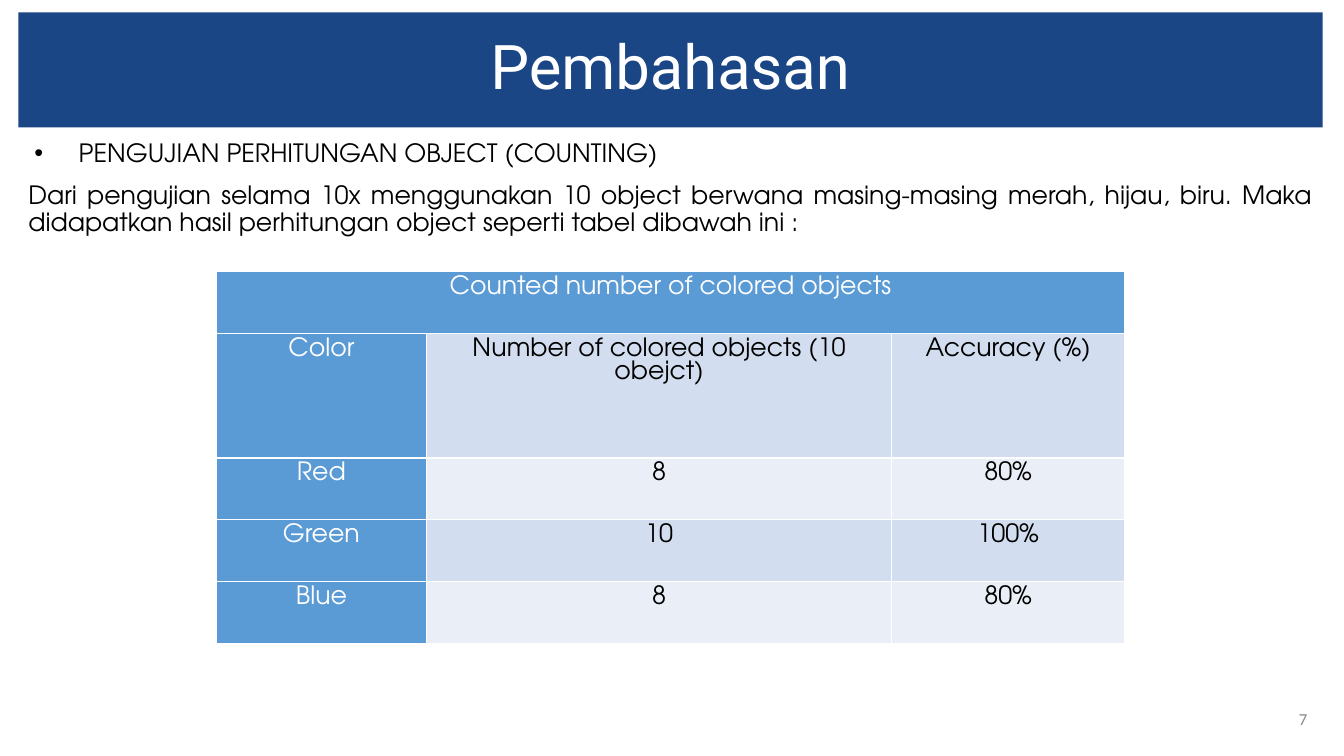
from dataclasses import dataclass

from lxml.etree import SubElement as Sub
from pptx import Presentation
from pptx.dml.color import RGBColor as Rgb
from pptx.enum.text import MSO_ANCHOR as Anchor, MSO_AUTO_SIZE as Auto, PP_ALIGN as Align
from pptx.oxml import parse_xml
from pptx.oxml.ns import nsdecls, qn
from pptx.util import Cm, Pt

HUES = {
    "navy": "1B4685", "blue": "5B9BD5", "pale": "D2DEEF", "light": "EAEFF7",
    "white": "FFFFFF", "black": "000000", "gray": "888888",
}
FACE = "TeX Gyre Adventor"


@dataclass
class Row:
    """One table row: its cells, height and band colour."""
    cells: tuple[str, ...]
    high: float
    band: str


@dataclass
class Box:
    """A place on the slide in centimetres."""
    left: float
    top: float
    wide: float
    high: float

    def lengths(self) -> list:
        """Return the four lengths for python-pptx."""
        return [Cm(n) for n in (self.left, self.top, self.wide, self.high)]


COLS = (5.3, 11.72, 5.87)
ROWS = (
    Row(("Counted number of colored objects",), 1.56, "blue"),
    Row(("Color", "Number of colored objects (10 obejct)", "Accuracy (%)"), 3.13, "pale"),
    Row(("Red", "8", "80%"), 1.56, "light"),
    Row(("Green", "10", "100%"), 1.56, "pale"),
    Row(("Blue", "8", "80%"), 1.56, "light"),
)


def write(para, text: str, *, size: float = 18, face: str = FACE, hue: str = "black",
          align=Align.CENTER, line: float = 0.9, gap: float = 0) -> None:
    """Fill a paragraph with formatted text."""
    run = para.add_run()
    run.text = text
    run.font.size, run.font.name = Pt(size), face
    run.font.color.rgb = Rgb.from_string(HUES[hue])
    para.alignment, para.line_spacing = align, line
    para.space_before, para.space_after = Pt(gap), Pt(0)


def paint(fill, hue: str) -> None:
    """Give a fill one solid colour."""
    fill.solid()
    fill.fore_color.rgb = Rgb.from_string(HUES[hue])


def place(shape, box: Box) -> None:
    """Move and size a shape."""
    shape.left, shape.top, shape.width, shape.height = box.lengths()


def bullet(para, left: float, hang: float, mark: str = "") -> None:
    """Set the indent of a paragraph and its bullet, if any."""
    props = para._p.get_or_add_pPr()
    props.set("marL", str(Cm(left)))
    props.set("indent", str(Cm(hang)))
    if mark:
        Sub(props, qn("a:buFont"), typeface="Arial")
        Sub(props, qn("a:buChar"), char=mark)
    else:
        Sub(props, qn("a:buNone"))


def edge(cell) -> None:
    """Draw thin white borders round a cell."""
    props = cell._tc.get_or_add_tcPr()
    for spot, side in enumerate("LRTB"):
        props.insert(spot, parse_xml(
            f'<a:ln{side} {nsdecls("a")} w="{Pt(1)}"><a:solidFill>'
            f'<a:srgbClr val="{HUES["white"]}"/></a:solidFill></a:ln{side}>'))


def grid(slide, box: Box) -> None:
    """Build the table of counted objects."""
    table = slide.shapes.add_table(len(ROWS), len(COLS), *box.lengths()).table
    for col, wide in zip(table.columns, COLS):
        col.width = Cm(wide)
    table.cell(0, 0).merge(table.cell(0, len(COLS) - 1))
    for i, row in enumerate(ROWS):
        table.rows[i].height = Cm(row.high)
        for j in range(len(COLS)):
            cell = table.cell(i, j)
            head = i == 0 or j == 0
            cell.margin_left = cell.margin_right = Cm(0.18)
            cell.margin_top, cell.margin_bottom = Cm(0.1), 0
            paint(cell.fill, "blue" if head else row.band)
            edge(cell)
            if j < len(row.cells):
                write(cell.text_frame.paragraphs[0], row.cells[j],
                      hue="white" if head else "black", line=1.0)


def main() -> None:
    """Build and save the slide."""
    deck = Presentation()
    deck.slide_width, deck.slide_height = Cm(33.87), Cm(19.05)
    slide = deck.slides.add_slide(deck.slide_layouts[1])

    title, body = slide.placeholders
    place(title, Box(0.46, 0.31, 32.87, 2.9))
    paint(title.fill, "navy")
    title.text_frame.vertical_anchor = Anchor.MIDDLE
    write(title.text_frame.paragraphs[0], "Pembahasan", size=44, face="Roboto", hue="white")

    place(body, Box(0.46, 3.43, 32.87, 14.15))
    frame = body.text_frame
    frame.auto_size = Auto.NONE
    topic, note = frame.paragraphs[0], frame.add_paragraph()
    bullet(topic, 1.27, -1.12, "•")
    write(topic, "PENGUJIAN PERHITUNGAN OBJECT (COUNTING)", align=Align.JUSTIFY)
    bullet(note, 0, 0)
    write(note, "Dari pengujian selama 10x menggunakan 10 object berwana masing-masing merah, "
          "hijau, biru. Maka didapatkan hasil perhitungan object seperti tabel dibawah ini :",
          align=Align.JUSTIFY, gap=10)

    grid(slide, Box(5.45, 6.85, sum(COLS), sum(row.high for row in ROWS)))

    page = slide.shapes.add_textbox(*Box(31.75, 17.6, 1.45, 1.02).lengths()).text_frame
    page.word_wrap, page.vertical_anchor = True, Anchor.MIDDLE
    write(page.paragraphs[0], "7", size=12, face="Calibri", hue="gray", align=Align.RIGHT, line=1.0)
    deck.save("out.pptx")


if __name__ == "__main__":
    main()
